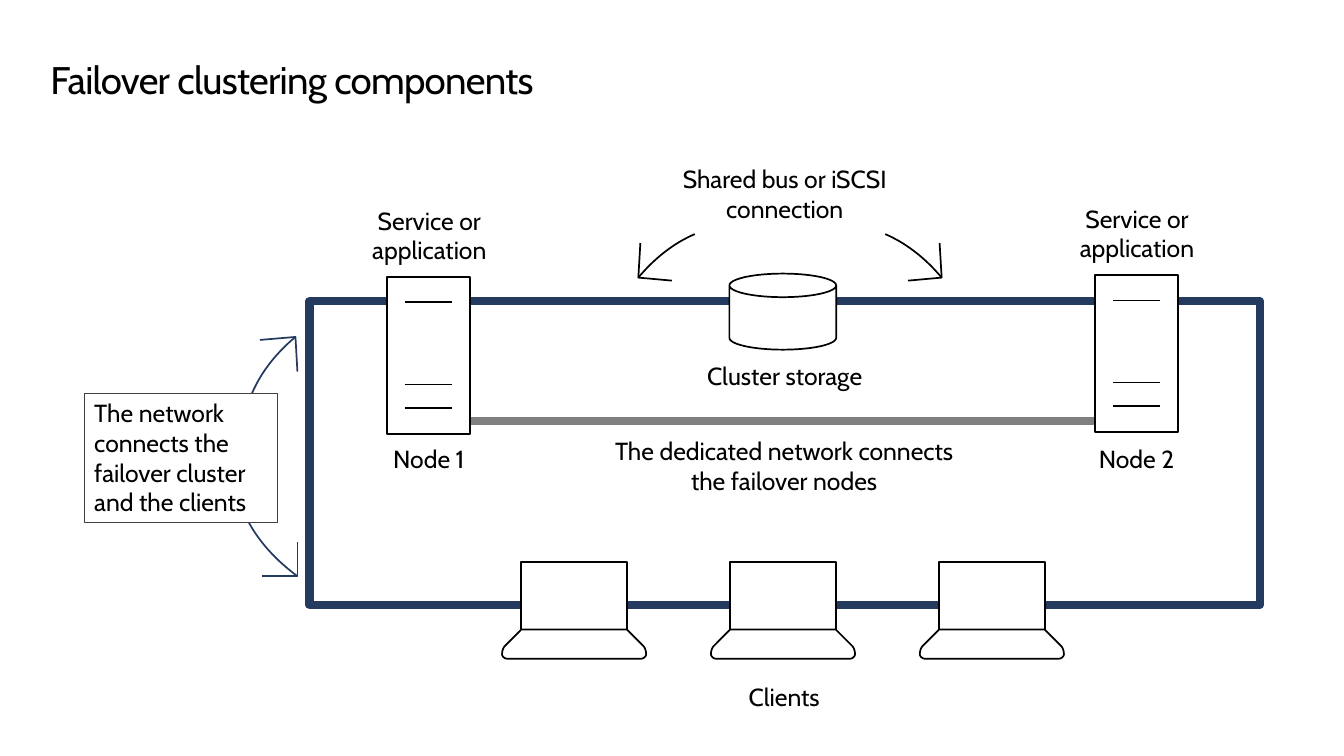
from lxml.etree import SubElement
from pptx import Presentation
from pptx.dml.color import RGBColor
from pptx.enum.shapes import MSO_CONNECTOR, MSO_SHAPE
from pptx.enum.text import MSO_ANCHOR, MSO_AUTO_SIZE, PP_ALIGN
from pptx.oxml.ns import qn
from pptx.util import Pt

COLORS = {
    "text": "000000",
    "outline": "000000",
    "paper": "FFFFFF",
    "client_network": "243A5E",
    "dedicated_network": "808080",
    "note_border": "404040",
}
FONT = "Cabin"
CAPTION_FRAME = {"word_wrap": True, "auto_size": MSO_AUTO_SIZE.SHAPE_TO_FIT_TEXT,
                 "vertical_anchor": MSO_ANCHOR.TOP}
TITLE_FRAME = {"word_wrap": True, "auto_size": MSO_AUTO_SIZE.NONE,
               "vertical_anchor": MSO_ANCHOR.TOP, "margin_left": 0,
               "margin_top": 0, "margin_right": Pt(7.2), "margin_bottom": 0}


def rgb(name):
    return RGBColor.from_string(COLORS[name])


def set_attributes(target, values):
    for name, value in values.items():
        setattr(target, name, value)


def paint(shape, fill=None, line=None, weight=1.25):
    shape.shadow.inherit = False
    if fill:
        shape.fill.solid()
        shape.fill.fore_color.rgb = rgb(fill)
    else:
        shape.fill.background()
    if line:
        shape.line.color.rgb = rgb(line)
        shape.line.width = Pt(weight)
    else:
        shape.line.fill.background()


def write(shape, text, frame_format, size=18, align=PP_ALIGN.CENTER):
    set_attributes(shape.text_frame, frame_format)
    paragraph = shape.text_frame.paragraphs[0]
    paragraph.alignment = align
    run = paragraph.add_run()
    run.text = text
    set_attributes(run.font, {"name": FONT, "size": Pt(size)})
    run.font.color.rgb = rgb("text")
    return run


def add_title(slide, text):
    title = slide.shapes.title
    set_attributes(title, {"left": Pt(36.7), "top": Pt(44.6),
                           "width": Pt(908), "height": Pt(32.4)})
    run = write(title, text, TITLE_FRAME, 28, PP_ALIGN.LEFT)
    title.text_frame.paragraphs[0].line_spacing = 0.9
    run._r.get_or_add_rPr().set("spc", "-50")


def add_caption(slide, text, left, top, width, height):
    box = slide.shapes.add_textbox(Pt(left), Pt(top), Pt(width), Pt(height))
    write(box, text, CAPTION_FRAME)


def add_block(slide, kind, left, top, width, height, **look):
    block = slide.shapes.add_shape(kind, Pt(left), Pt(top), Pt(width), Pt(height))
    paint(block, **look)
    return block


def add_outline(slide, contours, left=0, top=0, closed=False, **look):
    """Draw one freeform from lists of points, offset by left and top."""
    placed = [[(Pt(left + x), Pt(top + y)) for x, y in points] for points in contours]
    builder = slide.shapes.build_freeform(*placed[0][0])
    for index, (start, *rest) in enumerate(placed):
        if index:
            builder.move_to(*start)
        builder.add_line_segments(rest, close=closed)
    paint(builder.convert_to_shape(), **look)


def curve(start, control_1, control_2, end, steps=16):
    """Return points along a cubic Bezier curve."""
    points = []
    for step in range(steps + 1):
        t = step / steps
        weights = ((1 - t) ** 3, 3 * t * (1 - t) ** 2, 3 * t * t * (1 - t), t ** 3)
        points.append(tuple(sum(w * p[axis] for w, p in
                                zip(weights, (start, control_1, control_2, end)))
                            for axis in (0, 1)))
    return points


def add_node(slide, name, left, top):
    width, height = 60.5, 114.5
    case = [(0, 0), (width, 0), (width, height), (0, height), (0, 0)]
    slots = [[(13, y), (47.2, y)] for y in (18.7, 78.5, 95.8)]
    add_outline(slide, [case] + slots, left, top, fill="paper", line="outline")
    add_caption(slide, "Service or application", left - 24.5, top - 55.5, 110.2, 51.1)
    add_caption(slide, name, left - 11.5, 319.7, 83.5, 28.8)


def add_laptop(slide, left, top):
    width, hinge, bottom = 105, 49, 70.2
    screen = [(14, 0), (91, 0), (91, hinge), (14, hinge)]
    right_edge = (curve((103.2, 61.2), (104.3, 62.6), (105, 64.8), (105, 67), 6)
                  + curve((105, 67), (105, 68.4), (103.2, bottom), (101.5, bottom), 6))
    left_edge = [(width - x, y) for x, y in reversed(right_edge)]
    base = [(14, hinge), (91, hinge)] + right_edge + left_edge
    add_outline(slide, [screen, base], left, top, closed=True,
                fill="paper", line="outline")


def add_curved_arrow(slide, head, bend, color):
    """Draw an open head whose middle point is the tip, and a bent tail."""
    add_outline(slide, [head, curve(head[1], *bend)], line=color)


def add_dedicated_network(slide):
    link = slide.shapes.add_connector(
        MSO_CONNECTOR.STRAIGHT, Pt(809.3), Pt(306.7), Pt(342.7), Pt(306.7))
    link.line.color.rgb = rgb("dedicated_network")
    link.line.width = Pt(6)
    SubElement(link._element.spPr, qn("a:effectLst"))


def add_bus_arrows(slide):
    head = [(466.6, 177.1), (465.1, 202.3), (489.6, 204.5)]
    bend = [(475.9, 189.4), (489.6, 177.8), (506.2, 170.6)]
    axis = 575.6
    add_curved_arrow(slide, head, bend, "outline")
    add_curved_arrow(slide, *([(2 * axis - x, y) for x, y in points]
                              for points in (head, bend)), "outline")


def add_network_note(slide):
    add_curved_arrow(slide, [(189.4, 247.7), (215.3, 245.5), (216.7, 270.7)],
                     [(202.3, 256.3), (190.8, 270), (183.6, 286.6)], "client_network")
    add_curved_arrow(slide, [(190.8, 419.8), (216.7, 419.8), (216.7, 394.6)],
                     [(203, 409.7), (190.1, 396.7), (181.4, 380.9)], "client_network")
    note = add_block(slide, MSO_SHAPE.RECTANGLE, 61.6, 286.6, 140.6, 94.3,
                     fill="paper", line="note_border", weight=0.75)
    write(note, "The network connects the failover cluster and the clients",
          CAPTION_FRAME, align=PP_ALIGN.LEFT)


def main():
    deck = Presentation()
    set_attributes(deck, {"slide_width": Pt(979.2), "slide_height": Pt(550.8)})
    slide = deck.slides.add_slide(deck.slide_layouts[5])
    add_title(slide, "Failover clustering components")

    # Networks, behind the devices
    add_block(slide, MSO_SHAPE.RECTANGLE, 225.4, 219.6, 692.6, 221,
              line="client_network", weight=6)
    add_dedicated_network(slide)
    dedicated_label = add_block(slide, MSO_SHAPE.RECTANGLE, 439.9, 313.9, 262.8, 51.1,
                                fill="paper")
    write(dedicated_label, "The dedicated network connects the failover nodes",
          CAPTION_FRAME)

    # Cluster nodes
    add_node(slide, "Node 1", 282.2, 201.6)
    add_node(slide, "Node 2", 797.8, 200.2)

    # Shared storage
    storage = add_block(slide, MSO_SHAPE.CAN, 531.4, 199.4, 77.8, 55.4,
                        fill="paper", line="outline")
    storage.adjustments[0] = 0.31
    add_caption(slide, "Cluster storage", 483.1, 259.2, 177.1, 28.8)
    add_caption(slide, "Shared bus or iSCSI connection", 489.6, 115.9, 164.2, 51.1)
    add_bus_arrows(slide)

    # Clients
    for position in range(3):
        add_laptop(slide, 365.8 + 152.2 * position, 409.7)
    add_caption(slide, "Clients", 529.9, 493.2, 82.8, 28.8)

    # Note on the client network
    add_network_note(slide)
    deck.save("out.pptx")


if __name__ == "__main__":
    main()
